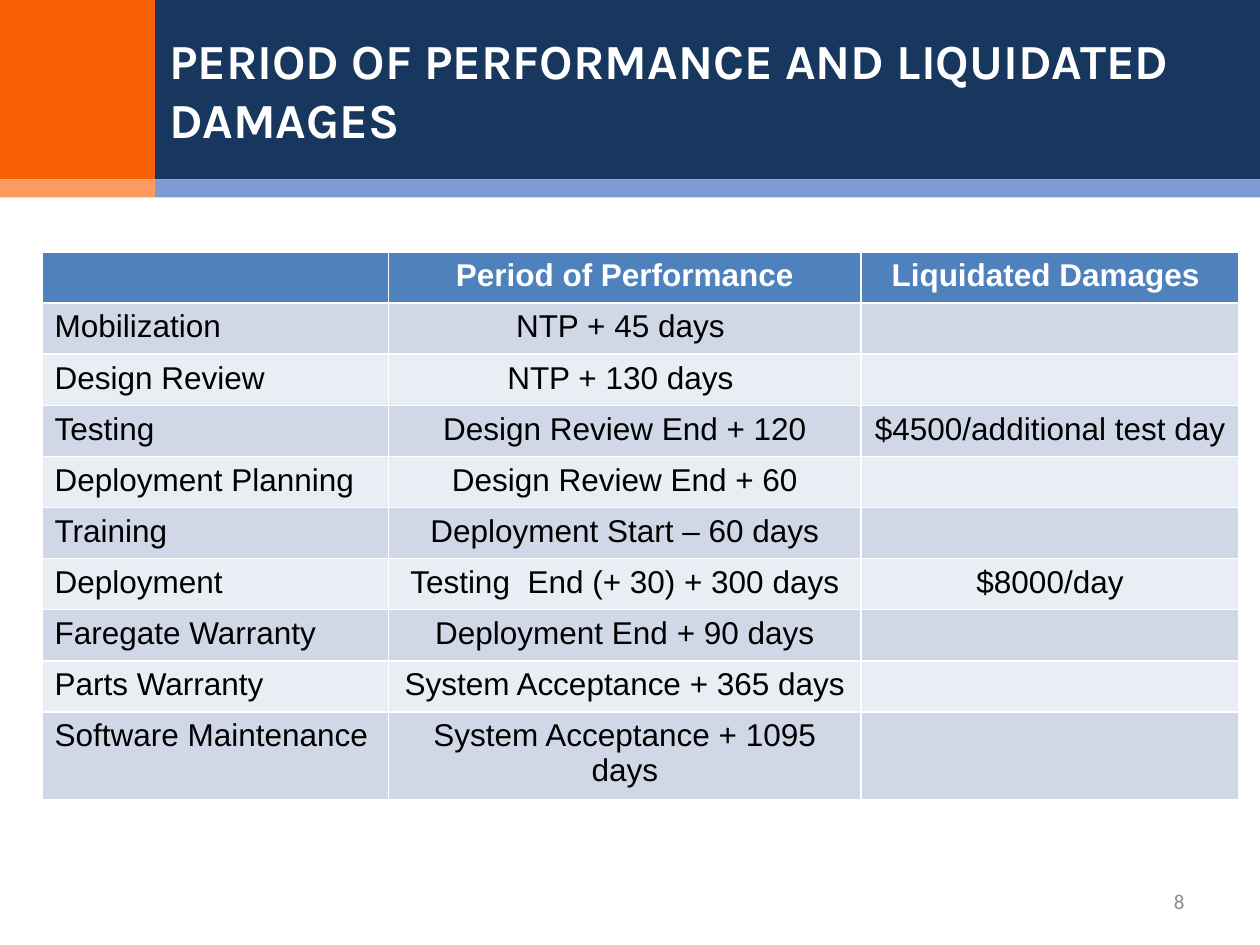
from pptx import Presentation
from pptx.dml.color import RGBColor
from pptx.enum.shapes import MSO_SHAPE
from pptx.enum.text import MSO_ANCHOR, PP_ALIGN
from pptx.util import Pt

COLORS = {
    "navy": "17375E", "orange": "F76003", "light_blue": "7F9BD3",
    "light_orange": "FD9A5D", "header": "4F81BD", "band_dark": "D0D8E8",
    "band_light": "E9EDF4", "white": "FFFFFF", "black": "000000", "gray": "8C8C8C",
}


def color(name):
    return RGBColor.from_string(COLORS[name])


def write(tf, text, size=18, font="Arial", ink="black", bold=False, align=PP_ALIGN.LEFT):
    p = tf.paragraphs[0]
    p.alignment = align
    r = p.add_run()
    r.text = text
    r.font.size = Pt(size)
    r.font.name = font
    r.font.bold = bold
    r.font.color.rgb = color(ink)


prs = Presentation()
prs.slide_width, prs.slide_height = Pt(720), Pt(540)
s = prs.slides.add_slide(prs.slide_layouts[6])

# Header blocks with the thin stripe below them
SPLIT, BAND_H, STRIPE_H = 88.5, 102.5, 10.3
for left, top, width, height, fill in [
    (SPLIT, 0, 720 - SPLIT, BAND_H, "navy"),
    (0, 0, SPLIT, BAND_H, "orange"),
    (SPLIT, BAND_H, 720 - SPLIT, STRIPE_H, "light_blue"),
    (0, BAND_H, SPLIT, STRIPE_H, "light_orange"),
]:
    sp = s.shapes.add_shape(MSO_SHAPE.RECTANGLE, Pt(left), Pt(top), Pt(width), Pt(height))
    sp.shadow.inherit = False
    sp.fill.solid()
    sp.fill.fore_color.rgb = color(fill)
    sp.line.fill.background()

# Slide number and title
for box, text, style in [
    ((516.25, 500.5, 167.75, 28.75), "8",
     dict(size=12, font="Calibri", ink="gray", align=PP_ALIGN.RIGHT)),
    ((89.5, 0, 630.5, 102.5), "PERIOD OF PERFORMANCE AND LIQUIDATED DAMAGES",
     dict(size=28, font="Karla", ink="white", bold=True)),
]:
    tf = s.shapes.add_textbox(*map(Pt, box)).text_frame
    tf.word_wrap = True
    tf.vertical_anchor = MSO_ANCHOR.MIDDLE
    write(tf, text, **style)

# Schedule table; white rules come from the default table style
rows = [
    ("", "Period of Performance", "Liquidated Damages "),
    ("Mobilization", "NTP + 45 days ", ""),
    ("Design Review", "NTP + 130 days ", ""),
    ("Testing", "Design Review End + 120", "$4500/additional test day"),
    ("Deployment Planning", "Design Review End + 60", ""),
    ("Training", "Deployment Start – 60 days", ""),
    ("Deployment", "Testing  End (+ 30) + 300 days", "$8000/day"),
    ("Faregate Warranty", "Deployment End + 90 days", ""),
    ("Parts Warranty", "System Acceptance + 365 days", ""),
    ("Software Maintenance", "System Acceptance + 1095 days", ""),
]
col_widths = [198, 270, 216]
ROW_H = 29.2
table = s.shapes.add_table(len(rows), len(col_widths), Pt(24), Pt(144),
                           Pt(sum(col_widths)), Pt(ROW_H * len(rows))).table
for column, width in zip(table.columns, col_widths):
    column.width = Pt(width)

for i, row in enumerate(rows):
    table.rows[i].height = Pt(ROW_H)
    is_header = i == 0
    fill = "header" if is_header else ("band_light", "band_dark")[i % 2]
    for j, text in enumerate(row):
        cell = table.cell(i, j)
        cell.fill.solid()
        cell.fill.fore_color.rgb = color(fill)
        if text:
            write(cell.text_frame, text, bold=is_header,
                  ink="white" if is_header else "black",
                  align=PP_ALIGN.CENTER if j else PP_ALIGN.LEFT)

prs.save("out.pptx")
